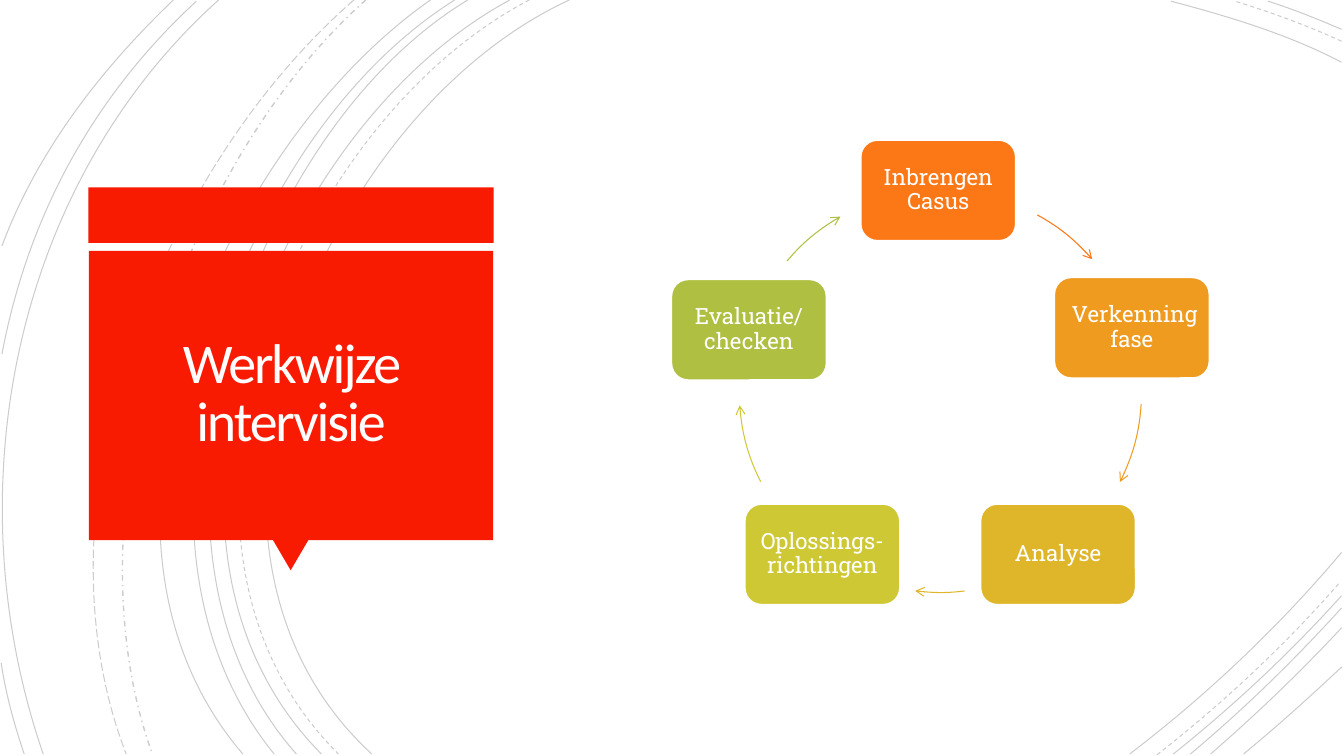
from dataclasses import dataclass
from math import cos, radians, sin, tan

from lxml import etree
from pptx import Presentation
from pptx.dml.color import RGBColor
from pptx.enum.dml import MSO_LINE
from pptx.enum.shapes import MSO_SHAPE
from pptx.enum.text import MSO_ANCHOR, PP_ALIGN
from pptx.oxml.ns import qn
from pptx.util import Cm, Pt

RECT, ROUNDED, TRIANGLE = MSO_SHAPE.RECTANGLE, MSO_SHAPE.ROUNDED_RECTANGLE, MSO_SHAPE.ISOSCELES_TRIANGLE
SOLID, DASH = MSO_LINE.SOLID, MSO_LINE.DASH
DASH_DOT, LONG_DASH = MSO_LINE.DASH_DOT, MSO_LINE.LONG_DASH
MIDDLE, CENTER = MSO_ANCHOR.MIDDLE, PP_ALIGN.CENTER


@dataclass(frozen=True)
class Theme:
    """Colours, fonts and sizes of the slide."""
    red: str = "F81B02"
    white: str = "FFFFFF"
    title_color: str = "FFFEFF"
    swirl: str = "000000"
    swirl_opacity: int = 20
    title_font: str = "Calibri"
    step_font: str = "Roboto Slab"
    title_size: float = 40
    step_size: float = 16
    thin: float = 0.75
    outline: float = 1.25


SWIRLS = [
    (SOLID, [(14.35, 0), (8, 2.92), (3.63, 13.72), (9.37, 19)]),
    (SOLID, [(33.81, 1.57), (32.46, 0.86), (30.94, 0.41), (29.51, 0.03)]),
    (SOLID, [(28.47, 19), (30.4, 17.53), (32.23, 15.8), (33.81, 13.92)]),
    (DASH, [(13.34, 0), (7.24, 3.18), (3.12, 13.64), (8.53, 19)]),
    (DASH, [(33.81, 1.04), (32.94, 0.64), (32, 0.3), (31.12, 0.03)]),
    (DASH, [(29.16, 19.02), (30.81, 17.73), (32.39, 16.26), (33.78, 14.66)]),
    (SOLID, [(12.85, 0), (6.86, 3.23), (2.79, 13.64), (8.1, 19)]),
    (SOLID, [(33.81, 0.74), (33.2, 0.48), (32.59, 0.23), (31.95, 0.03)]),
    (SOLID, [(29.57, 19), (31.06, 17.81), (32.51, 16.46), (33.81, 15.01)]),
    (SOLID, [(11.79, 0), (6.2, 3.38), (2.79, 13.74), (7.47, 19)]),
    (SOLID, [(30, 19), (31.34, 17.88), (32.61, 16.64), (33.81, 15.32)]),
    (SOLID, [(11.46, 0), (5.87, 3.51), (2.46, 13.54), (6.91, 19)]),
    (SOLID, [(30.51, 19), (31.65, 18.01), (32.77, 16.94), (33.81, 15.82)]),
    (SOLID, [(10.85, 0), (5.51, 3.73), (1.35, 13.44), (6.12, 19)]),
    (SOLID, [(31.34, 19), (32.18, 18.31), (32.99, 17.58), (33.81, 16.81)]),
    (DASH_DOT, [(9.22, 0), (4.47, 4.22), (1.65, 12.93), (3.84, 19)]),
    (LONG_DASH, [(8.92, 0), (3.99, 4.29), (0.74, 12.67), (3.18, 19)]),
    (SOLID, [(5.51, 0), (0.28, 4.7), (-1.17, 12.45), (1.09, 19)]),
    (SOLID, [(4.95, 0.03), (2.34, 2.44), (0.71, 5.44), (0.05, 8.92)]),
    (SOLID, [(0.03, 16.71), (0.15, 17.5), (0.36, 18.26), (0.61, 19)]),
    (SOLID, [(4.37, 0), (2.54, 1.75), (0.94, 3.81), (0.05, 6.2)]),
]

STEPS = [
    ("Inbrengen Casus", "FC7715", (21.69, 3.53), (-61.2, -41)),
    (" Verkenning fase", "EE9B1F", (26.57, 6.99), (3.7, 26.8)),
    ("Analyse", "DFB62A", (24.71, 12.7), (83.1, 97.2)),
    ("Oplossings- richtingen", "CFC835", (18.77, 12.7), (153.3, 176)),
    ("Evaluatie/ checken", "AFBF41", (16.92, 7.04), (220.3, 240.2)),
]
CYCLE_X, CYCLE_Y, CYCLE_RADIUS = 23.7, 9.86, 5.07
CYCLE_FRAME = (CYCLE_X - CYCLE_RADIUS, CYCLE_Y - CYCLE_RADIUS, 2 * CYCLE_RADIUS)
STEP_W, STEP_H = 3.91, 2.54


def cycle_arc(start, end):
    """Return the four curve points of an arc of the cycle, angles in degrees."""
    a, b = radians(start), radians(end)
    k = 4 / 3 * tan((b - a) / 4)
    units = [(cos(a), sin(a)), (cos(a) - k * sin(a), sin(a) + k * cos(a)),
             (cos(b) + k * sin(b), sin(b) - k * cos(b)), (cos(b), sin(b))]
    return [(CYCLE_X + CYCLE_RADIUS * x, CYCLE_Y + CYCLE_RADIUS * y) for x, y in units]


class SlideBuilder:
    """Draws styled elements on the current slide."""

    def __init__(self, slide, theme):
        self.s = slide
        self.theme = theme

    def box(self, kind, left, top, width, height, fill, outline=None):
        """Add a filled preset shape."""
        sp = self.s.shapes.add_shape(kind, Cm(left), Cm(top), Cm(width), Cm(height))
        sp.shadow.inherit = False
        sp.fill.solid()
        sp.fill.fore_color.rgb = RGBColor.from_string(fill)
        if outline:
            sp.line.color.rgb = RGBColor.from_string(outline)
            sp.line.width = Pt(self.theme.outline)
        else:
            sp.line.fill.background()
        return sp

    def label(self, sp, text, font, size, color, inset, spacing):
        """Put centred text in a shape and return its run."""
        tf = sp.text_frame
        tf.word_wrap = True
        tf.vertical_anchor = MIDDLE
        tf.margin_left = tf.margin_right = tf.margin_top = tf.margin_bottom = Cm(inset)
        p = tf.paragraphs[0]
        p.text = text
        p.alignment = CENTER
        p.line_spacing = spacing
        r = p.runs[0]
        r.font.name = font
        r.font.size = Pt(size)
        r.font.color.rgb = RGBColor.from_string(color)
        return r

    def curve(self, points, color, width, dash=SOLID, opacity=None):
        """Add an open cubic curve from its four points."""
        (x, y), *rest = [(Cm(px), Cm(py)) for px, py in points]
        builder = self.s.shapes.build_freeform(x, y)
        builder.add_line_segments(rest, close=False)
        sp = builder.convert_to_shape()
        sp.shadow.inherit = False
        sp.fill.background()
        sp.line.color.rgb = RGBColor.from_string(color)
        sp.line.width = Pt(width)
        sp.line.dash_style = dash
        path = sp._element.find(".//" + qn("a:path"))
        bend = etree.SubElement(path, qn("a:cubicBezTo"))
        for segment in path.findall(qn("a:lnTo")):
            bend.append(segment[0])
            path.remove(segment)
        if opacity:
            rgb = sp._element.find(".//" + qn("a:ln")).find(".//" + qn("a:srgbClr"))
            etree.SubElement(rgb, qn("a:alpha"), val=str(opacity * 1000))
        return sp

    def arrow(self, start, end, color):
        """Add an arc with an arrowhead, framed by the whole cycle."""
        sp = self.curve(cycle_arc(start, end), color, self.theme.thin)
        left, top, size = [Cm(v) for v in CYCLE_FRAME]
        path = sp._element.find(".//" + qn("a:path"))
        for pt in path.iter(qn("a:pt")):
            pt.set("x", str(int(pt.get("x")) + sp.left - left))
            pt.set("y", str(int(pt.get("y")) + sp.top - top))
        path.set("w", str(size))
        path.set("h", str(size))
        sp.left, sp.top, sp.width, sp.height = left, top, size, size
        etree.SubElement(sp._element.find(".//" + qn("a:ln")), qn("a:tailEnd"), type="arrow")

    def swirls(self):
        """Draw the background lines."""
        th = self.theme
        for dash, points in SWIRLS:
            width = 1 if dash == DASH_DOT else th.thin
            self.curve(points, th.swirl, width, dash, th.swirl_opacity)

    def title(self, text):
        """Draw the red title panel with its pointer."""
        th = self.theme
        self.box(RECT, 2.23, 4.72, 10.21, 1.4, th.red)
        self.box(TRIANGLE, 6.88, 13.61, 0.89, 0.76, th.red).rotation = 180
        panel = self.box(RECT, 2.24, 6.32, 10.19, 7.29, th.red)
        r = self.label(panel, text, th.title_font, th.title_size, th.title_color, 0.86, 0.85)
        r._r.get_or_add_rPr().set("spc", "-150")

    def cycle(self):
        """Draw the steps around the circle with their arrows."""
        th = self.theme
        for text, color, (left, top), (start, end) in STEPS:
            sp = self.box(ROUNDED, left, top, STEP_W, STEP_H, color, th.white)
            self.label(sp, text, th.step_font, th.step_size, th.white, 0.17, 0.9)
            self.arrow(start, end, color)


def main():
    """Build and save the slide."""
    prs = Presentation()
    prs.slide_width, prs.slide_height = Cm(33.87), Cm(19.05)
    builder = SlideBuilder(prs.slides.add_slide(prs.slide_layouts[6]), Theme())
    builder.swirls()
    builder.title("Werkwijze intervisie")
    builder.cycle()
    prs.save("out.pptx")


if __name__ == "__main__":
    main()
